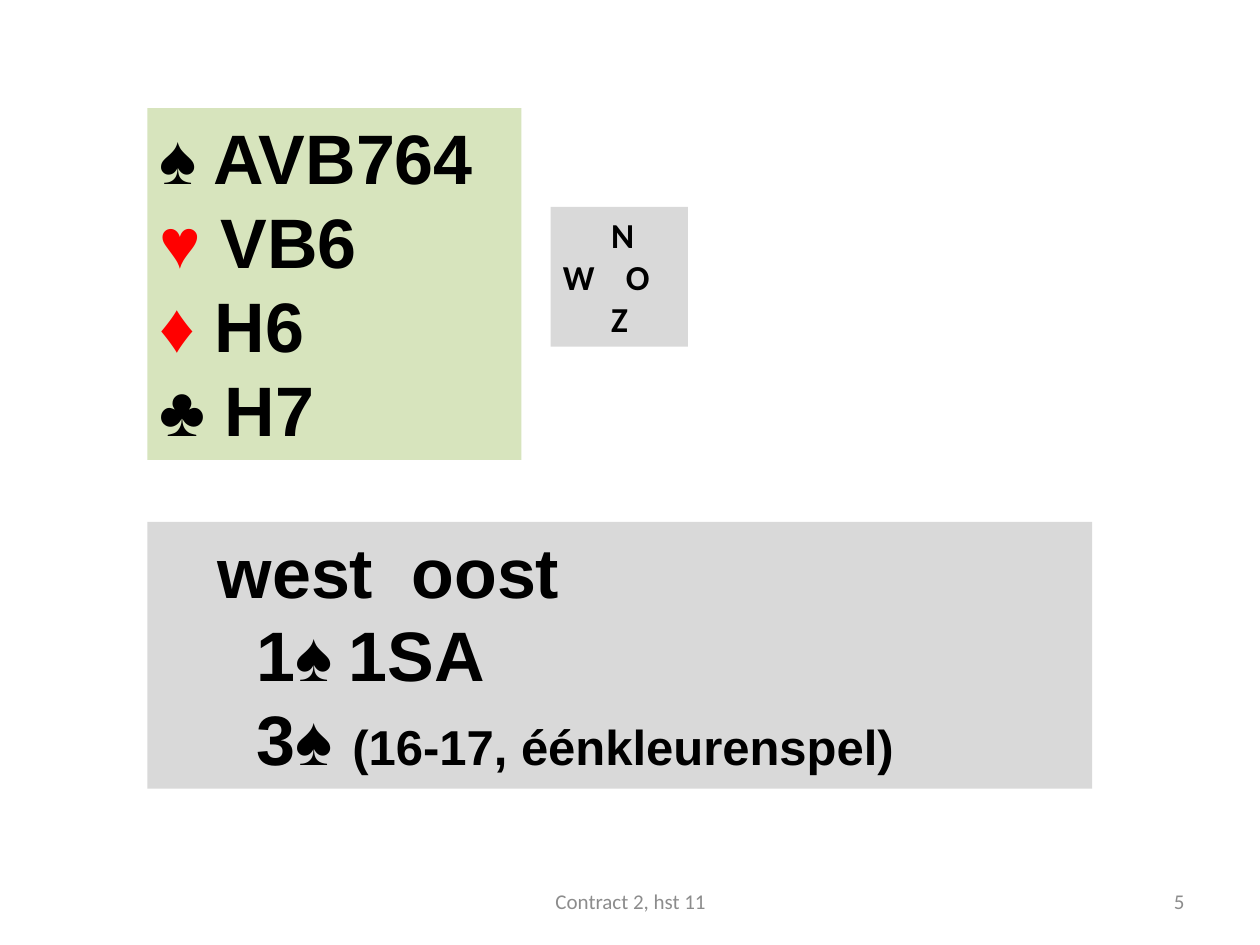
"""Build a bridge bidding slide with a hand, a compass and an auction."""
import pptx
import pptx.dml.color
import pptx.enum.shapes
import pptx.enum.text
import pptx.oxml
import pptx.oxml.ns
import pptx.util
import lxml.etree

Cm = pptx.util.Cm
ALIGN = pptx.enum.text.PP_ALIGN
ANCHOR = pptx.enum.text.MSO_ANCHOR
COLOURS = {
    "black": "000000",
    "red": "FF0000",
    "green": "D7E4BD",
    "grey": "D9D9D9",
    "footer": "8C8C8C",
}


class SlideBuilder:
    def __init__(self, slide):
        self.slide = slide

    def colour(self, name):
        return pptx.dml.color.RGBColor.from_string(COLOURS[name])

    def format_run(self, run, font, size, colour, bold):
        run.font.name = font
        run.font.size = pptx.util.Pt(size)
        run.font.bold = bold
        run.font.color.rgb = self.colour(colour)

    def indent(self, paragraph, indent, tab):
        properties = paragraph._p.get_or_add_pPr()
        properties.set("marL", "0")
        properties.set("indent", str(Cm(indent)))
        if tab:
            qn = pptx.oxml.ns.qn
            tab_list = lxml.etree.SubElement(properties, qn("a:tabLst"))
            lxml.etree.SubElement(tab_list, qn("a:tab"), pos=str(Cm(tab)), algn="l")

    def panel(self, box, fill, lines, font, size, tab=None):
        shape = self.slide.shapes.add_shape(
            pptx.enum.shapes.MSO_SHAPE.RECTANGLE, *map(Cm, box))
        shape.shadow.inherit = False
        shape.fill.solid()
        shape.fill.fore_color.rgb = self.colour(fill)
        shape.line.fill.background()
        text_frame = shape.text_frame
        text_frame.word_wrap = True
        text_frame.auto_size = pptx.enum.text.MSO_AUTO_SIZE.SHAPE_TO_FIT_TEXT
        text_frame.vertical_anchor = ANCHOR.TOP
        text_frame.text = "\n".join(parts[0][0] for _, parts in lines)
        for paragraph, (indent, parts) in zip(text_frame.paragraphs, lines):
            paragraph.alignment = ALIGN.LEFT
            self.indent(paragraph, indent, tab)
            for text, _, _ in parts[1:]:
                paragraph.add_run().text = text
            for run, (_, colour, run_size) in zip(paragraph.runs, parts):
                self.format_run(run, font, run_size or size, colour, True)

    def footer(self, box, text, alignment):
        text_frame = self.slide.shapes.add_textbox(*map(Cm, box)).text_frame
        text_frame.word_wrap = True
        text_frame.vertical_anchor = ANCHOR.MIDDLE
        text_frame.text = text
        paragraph = text_frame.paragraphs[0]
        paragraph.alignment = alignment
        self.format_run(paragraph.runs[0], "Calibri", 12, "footer", False)


def main():
    presentation = pptx.Presentation()
    presentation.slide_width, presentation.slide_height = Cm(25.4), Cm(19.05)
    builder = SlideBuilder(presentation.slides.add_slide(presentation.slide_layouts[6]))

    hand = [("♠", "black", "AVB764"), ("♥", "red", "VB6"),
            ("♦", "red", "H6"), ("♣", "black", "H7")]
    hand_lines = [(0, [(suit, colour, None), (f" {cards}", "black", None)])
                  for suit, colour, cards in hand]
    builder.panel((2.97, 2.18, 7.54, 7.09), "green", hand_lines, "Arial", 40)

    compass_lines = [(indent, [(text, "black", None)])
                     for indent, text in ((0.97, "N"), (0, "W\tO"), (0.97, "Z"))]
    builder.panel((11.1, 4.17, 2.77, 2.82), "grey", compass_lines, "Calibri", 20, tab=1.6)

    auction_lines = [
        (1.17, [("west\toost", "black", None)]),
        (1.96, [("1♠\t1SA", "black", None)]),
        (1.96, [("3♠ ", "black", None), ("(16-17, éénkleurenspel)", "black", 28)]),
    ]
    builder.panel((2.97, 10.52, 19.05, 5.38), "grey", auction_lines, "Arial", 40, tab=12.7)

    builder.footer((18.21, 17.65, 5.92, 1.02), "5", ALIGN.RIGHT)
    builder.footer((8.69, 17.65, 8.05, 1.02), "Contract 2, hst 11", ALIGN.CENTER)
    presentation.save("out.pptx")


if __name__ == "__main__":
    main()
